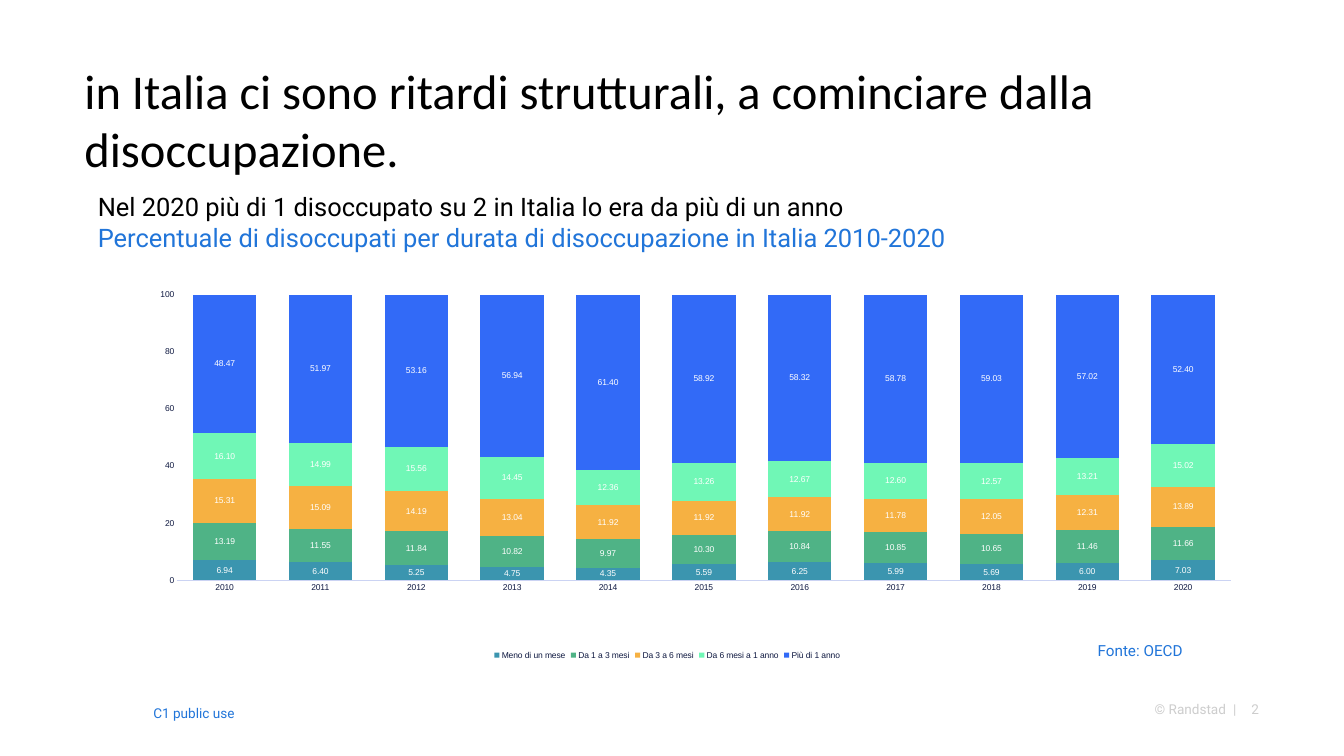
from lxml import etree
from pptx import Presentation
from pptx.chart.data import CategoryChartData
from pptx.dml.color import RGBColor
from pptx.enum.chart import XL_CHART_TYPE as CHART, XL_LABEL_POSITION as LABEL
from pptx.enum.chart import XL_LEGEND_POSITION as LEGEND, XL_TICK_MARK as TICK
from pptx.enum.text import MSO_ANCHOR as ANCHOR, MSO_AUTO_SIZE as AUTO, PP_ALIGN as ALIGN
from pptx.oxml.ns import qn
from pptx.util import Pt

BLUE, GREY, BLACK, NAVY, WHITE = "2175D9", "CDCDCD", "000000", "0F1941", "FFFFFF"
YEARS = [str(year) for year in range(2010, 2021)]
DURATIONS = [
    ("Meno di un mese", "3B95AF",
     (6.94, 6.4, 5.25, 4.75, 4.35, 5.59, 6.25, 5.99, 5.69, 6, 7.03)),
    ("Da 1 a 3 mesi", "4FB386",
     (13.19, 11.55, 11.84, 10.82, 9.97, 10.3, 10.84, 10.85, 10.65, 11.46, 11.66)),
    ("Da 3 a 6 mesi", "F6B142",
     (15.31, 15.09, 14.19, 13.04, 11.92, 11.92, 11.92, 11.78, 12.05, 12.31, 13.89)),
    ("Da 6 mesi a 1 anno", "70F7B6",
     (16.1, 14.99, 15.56, 14.45, 12.36, 13.26, 12.67, 12.6, 12.57, 13.21, 15.02)),
    ("Più di 1 anno", "326AF7",
     (48.47, 51.97, 53.16, 56.94, 61.4, 58.92, 58.32, 58.78, 59.03, 57.02, 52.4)),
]


def rgb(color):
    return RGBColor.from_string(color)


def assign(target, values):
    for name, value in values.items():
        setattr(target, name, value)


def set_font(font, size, color, name):
    assign(font, {"size": Pt(size), "name": name, "bold": False})
    font.color.rgb = rgb(color)


def set_plot_layout(chart, x, y, w, h):
    """Fix the inner plot area, in fractions of the chart."""
    area = chart._chartSpace.chart.plotArea
    for old in area.findall(qn("c:layout")):
        area.remove(old)
    layout = etree.Element(qn("c:layout"))
    manual = etree.SubElement(layout, qn("c:manualLayout"))
    for tag, value in (("layoutTarget", "inner"), ("xMode", "edge"), ("yMode", "edge"),
                       ("x", x), ("y", y), ("w", w), ("h", h)):
        etree.SubElement(manual, qn(f"c:{tag}")).set("val", str(value))
    area.insert(0, layout)


class Deck:
    font = "Roboto"
    chart_font = "Arial"
    chart_size = 10

    def __init__(self, width, height):
        self.prs = Presentation()
        assign(self.prs, {"slide_width": Pt(width), "slide_height": Pt(height)})
        self.s = self.prs.slides.add_slide(self.prs.slide_layouts[5])

    def fill_text(self, sp, lines, size, font, inset=(0, 0), align=ALIGN.LEFT,
                  anchor=ANCHOR.TOP):
        """Write (text, colour) lines, one paragraph each."""
        tf = sp.text_frame
        dx, dy = map(Pt, inset)
        assign(tf, {"word_wrap": True, "auto_size": AUTO.NONE, "vertical_anchor": anchor,
                    "margin_left": dx, "margin_right": dx,
                    "margin_top": dy, "margin_bottom": dy})
        for i, (text, color) in enumerate(lines):
            p = tf.add_paragraph() if i else tf.paragraphs[0]
            p.alignment = align
            r = p.add_run()
            r.text = text
            set_font(r.font, size, color, font)

    def title(self, box, text, size):
        sp = self.s.shapes.title
        assign(sp, dict(zip(("left", "top", "width", "height"), map(Pt, box))))
        self.fill_text(sp, [(text, BLACK)], size, "Calibri")

    def text(self, box, lines, size, **style):
        sp = self.s.shapes.add_textbox(*map(Pt, box))
        self.fill_text(sp, lines, size, self.font, **style)

    def stacked_chart(self, box, categories, series):
        data = CategoryChartData(number_format="0.00")
        data.categories = categories
        for name, _, values in series:
            data.add_series(name, values)
        chart = self.s.shapes.add_chart(CHART.COLUMN_STACKED, *map(Pt, box), data).chart
        assign(chart, {"has_title": False, "has_legend": True})
        set_font(chart.font, self.chart_size, NAVY, self.chart_font)
        assign(chart.legend, {"position": LEGEND.BOTTOM, "include_in_layout": False})
        set_font(chart.legend.font, self.chart_size, NAVY, self.chart_font)
        plot = chart.plots[0]
        assign(plot, {"gap_width": 51, "overlap": 100, "vary_by_categories": False})
        for ser, (_, color, _) in zip(plot.series, series):
            ser.format.fill.solid()
            ser.format.fill.fore_color.rgb = rgb(color)
            labels = ser.data_labels
            assign(labels, {"show_value": True, "position": LABEL.CENTER,
                            "number_format": "0.00", "number_format_is_linked": False})
            set_font(labels.font, self.chart_size, WHITE, self.chart_font)
        for axis in (chart.category_axis, chart.value_axis):
            assign(axis, {"major_tick_mark": TICK.NONE, "minor_tick_mark": TICK.NONE,
                          "has_major_gridlines": False})
            set_font(axis.tick_labels.font, self.chart_size, NAVY, self.chart_font)
        line = chart.category_axis.format.line
        line.width = Pt(0.75)
        line.color.rgb = rgb("CBD3F3")
        axis = chart.value_axis
        assign(axis, {"minimum_scale": 0, "maximum_scale": 100, "major_unit": 20})
        assign(axis.tick_labels, {"number_format": "#,##0", "number_format_is_linked": False})
        axis.format.line.fill.background()
        set_plot_layout(chart, 0.067, 0.033, 0.931, 0.751)


def main():
    deck = Deck(1583.3, 890.6)
    deck.title((99.4, 72, 1385.3, 121.7),
               "in Italia ci sono ritardi strutturali, a cominciare dalla disoccupazione.", 57.2)
    deck.text((99.4, 217.4, 1416.2, 88.6),
              [("Nel 2020 più di 1 disoccupato su 2 in Italia lo era da più di un anno", BLACK),
               ("Percentuale di disoccupati per durata di disoccupazione in Italia 2010-2020",
                BLUE)], 30, inset=(15.8, 7.9))
    deck.stacked_chart((118.8, 332.6, 1334.2, 447.8), YEARS, DURATIONS)
    deck.text((1285.9, 751.7, 190, 40), [("Fonte: OECD", BLUE)], 18, inset=(7.2, 3.6))
    deck.text((169.2, 824.4, 134.6, 31.7), [("C1 public use", BLUE)], 16, inset=(11.5, 5.8))
    for left, width, text in ((789.1, 655.2, "© Randstad"), (1448.6, 7.9, "|"),
                              (1450.1, 33.1, "2")):
        deck.text((left, 811.4, width, 47.5), [(text, GREY)], 16,
                  align=ALIGN.RIGHT, anchor=ANCHOR.MIDDLE)
    deck.prs.save("out.pptx")


if __name__ == "__main__":
    main()
